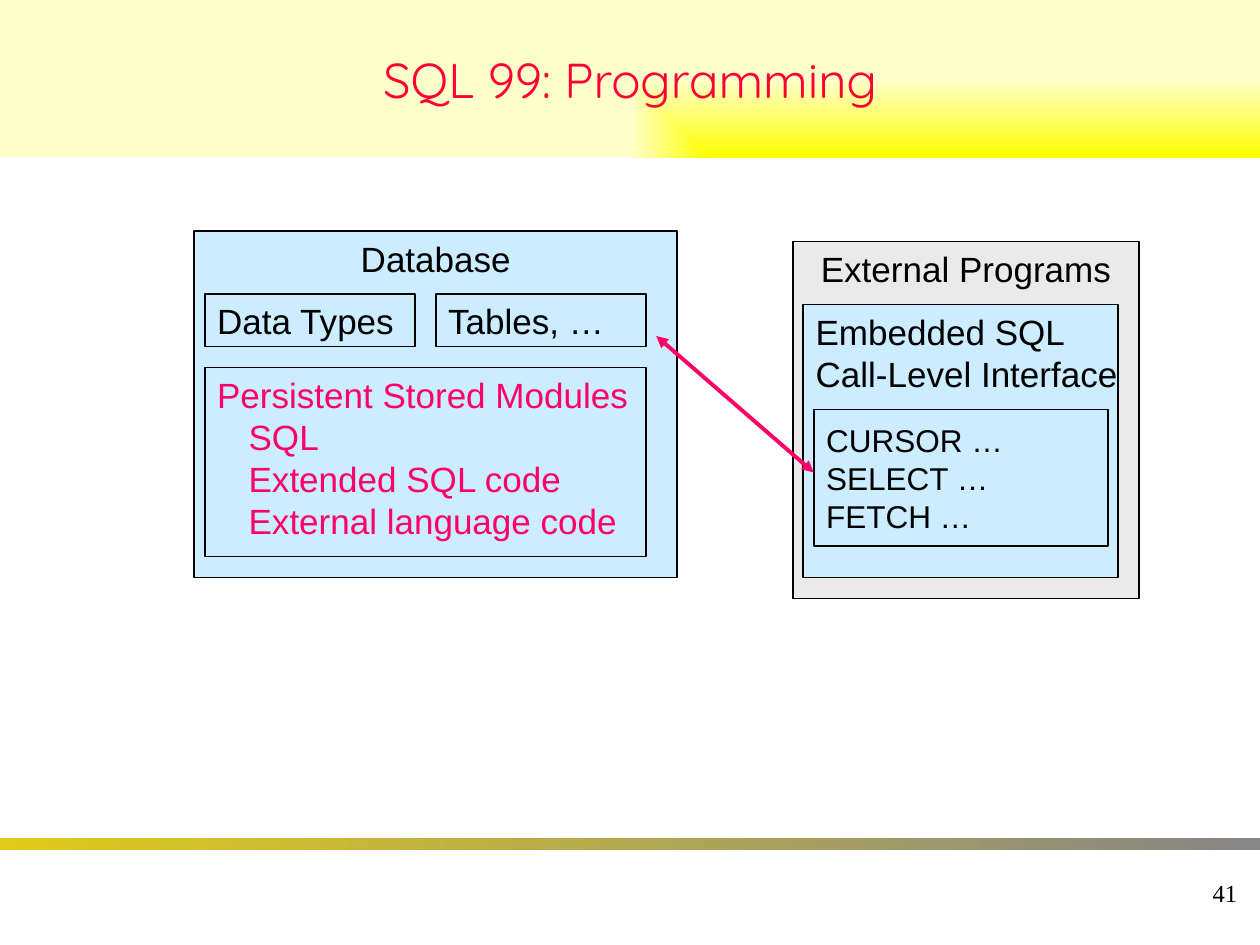
from dataclasses import dataclass

import pptx
import pptx.dml.color
import pptx.enum.shapes
import pptx.enum.text
import pptx.oxml.ns
import pptx.oxml.xmlchemy
import pptx.util
from lxml import etree

ALIGN = pptx.enum.text.PP_ALIGN
ANCHOR = pptx.enum.text.MSO_ANCHOR
CELLS_PER_INCH = 24  # the slide is a grid of 240 columns by 180 rows


@dataclass(frozen=True)
class Theme:
    ink: str = "000000"
    title: str = "FF0033"
    accent: str = "FF0066"
    panel: str = "CCECFF"
    outer: str = "EAEAEA"
    banner: tuple[str, str] = ("FFFF00", "FFFFCC")
    rule: tuple[str, str] = ("E0CB1B", "868686")
    body_font: str = "Arial"
    title_font: str = "Quicksand"
    number_font: str = "Times New Roman"
    title_size: int = 28
    body_size: int = 20
    code_size: int = 18
    number_size: int = 14
    outline: float = 1
    arrow: float = 2.25


THEME = Theme()


@dataclass(frozen=True)
class Style:
    size: int = THEME.body_size
    color: str = THEME.ink
    font: str = THEME.body_font
    align: ALIGN = ALIGN.LEFT
    anchor: ANCHOR = ANCHOR.TOP


@dataclass(frozen=True)
class Box:
    """A labelled rectangle, placed in grid cells."""
    col: float
    row: float
    cols: float
    rows: float
    lines: tuple[str, ...] = ()
    style: Style = Style()
    fill: str = THEME.panel
    indent: float = 0  # columns, for every line after the first


def cells(count: float) -> int:
    return pptx.util.Inches(count / CELLS_PER_INCH)


def rgb(value: str) -> pptx.dml.color.RGBColor:
    return pptx.dml.color.RGBColor.from_string(value)


def write(frame, box: Box, wrap: bool = False) -> None:
    frame.word_wrap = wrap
    frame.vertical_anchor = box.style.anchor
    for index, line in enumerate(box.lines):
        paragraph = frame.paragraphs[0] if index == 0 else frame.add_paragraph()
        paragraph.alignment = box.style.align
        if index and box.indent:
            properties = paragraph._p.get_or_add_pPr()
            properties.set("marL", str(cells(box.indent)))
            properties.set("indent", "0")
        run = paragraph.add_run()
        run.text = line
        run.font.size = pptx.util.Pt(box.style.size)
        run.font.name = box.style.font
        run.font.color.rgb = rgb(box.style.color)


def add_rectangle(slide, box: Box):
    shape = slide.shapes.add_shape(
        pptx.enum.shapes.MSO_SHAPE.RECTANGLE,
        cells(box.col), cells(box.row), cells(box.cols), cells(box.rows))
    shape.shadow.inherit = False
    return shape


def add_panel(slide, box: Box) -> None:
    shape = add_rectangle(slide, box)
    shape.fill.solid()
    shape.fill.fore_color.rgb = rgb(box.fill)
    shape.line.color.rgb = rgb(THEME.ink)
    shape.line.width = pptx.util.Pt(THEME.outline)
    write(shape.text_frame, box)


def add_band(slide, box: Box, colors: tuple[str, str], from_corner: bool = False) -> None:
    """Gradient band, running left to right or out of the bottom right corner."""
    shape = add_rectangle(slide, box)
    shape.line.fill.background()
    shape.fill.gradient()
    shape.fill.gradient_angle = 0
    for stop, color in zip(shape.fill.gradient_stops, colors):
        stop.color.rgb = rgb(color)
    if from_corner:
        qn = pptx.oxml.ns.qn
        linear = next(shape._element.spPr.iter(qn("a:lin")))
        gradient = linear.getparent()
        gradient.remove(linear)
        corner = etree.SubElement(gradient, qn("a:path"), {"path": "rect"})
        etree.SubElement(corner, qn("a:fillToRect"), {"l": "100000", "t": "100000"})
    write(shape.text_frame, box, wrap=True)


def add_double_arrow(slide, start: tuple[float, float], end: tuple[float, float]) -> None:
    arrow = slide.shapes.add_connector(
        pptx.enum.shapes.MSO_CONNECTOR.STRAIGHT, *map(cells, start + end))
    arrow.line.color.rgb = rgb(THEME.accent)
    arrow.line.width = pptx.util.Pt(THEME.arrow)
    qn = pptx.oxml.ns.qn
    for end_tag in ("a:headEnd", "a:tailEnd"):
        etree.SubElement(arrow.line._get_or_add_ln(), qn(end_tag), {"type": "triangle"})
    etree.SubElement(arrow._element.spPr, qn("a:effectLst"))


HEADING = Style(align=ALIGN.CENTER)
LABEL = Style(anchor=ANCHOR.MIDDLE)

DATABASE = (
    Box(37, 44, 92, 66, ("Database",), HEADING),
    Box(39, 56, 40, 10, ("Data Types",), LABEL),
    Box(83, 56, 40, 10, ("Tables, …",), LABEL),
    Box(39, 70, 84, 36,
        ("Persistent Stored Modules", "SQL", "Extended SQL code", "External language code"),
        Style(color=THEME.accent), indent=6),
)
EXTERNAL_PROGRAMS = (
    Box(151, 46, 66, 68, ("External Programs",), HEADING, THEME.outer),
    Box(153, 58, 60, 52, ("Embedded SQL", "Call-Level Interface")),
    Box(155, 78, 56, 26, ("CURSOR …", "SELECT …", "FETCH …"),
        Style(size=THEME.code_size, anchor=ANCHOR.MIDDLE)),
)
RULE = Box(0, 159.6, 240, 2.4)
TITLE = Box(0, 0, 240, 30, ("SQL 99: Programming",),
            Style(THEME.title_size, THEME.title, THEME.title_font, ALIGN.CENTER, ANCHOR.MIDDLE))
PAGE_NUMBER = Box(188, 164, 50, 12, ("41",),
                  Style(THEME.number_size, font=THEME.number_font,
                        align=ALIGN.RIGHT, anchor=ANCHOR.MIDDLE))


def main() -> None:
    deck = pptx.Presentation()
    deck.slide_width, deck.slide_height = cells(240), cells(180)
    slide = deck.slides.add_slide(deck.slide_layouts[6])

    # Footer rule and page number
    add_band(slide, RULE, THEME.rule)
    number = slide.shapes.add_textbox(
        cells(PAGE_NUMBER.col), cells(PAGE_NUMBER.row),
        cells(PAGE_NUMBER.cols), cells(PAGE_NUMBER.rows))
    write(number.text_frame, PAGE_NUMBER)

    # Title banner
    add_band(slide, TITLE, THEME.banner, from_corner=True)

    # Database and the programs outside it
    for box in DATABASE + EXTERNAL_PROGRAMS:
        add_panel(slide, box)

    # Exchange between embedded code and tables
    add_double_arrow(slide, (155, 90), (125, 64))

    deck.save("out.pptx")


if __name__ == "__main__":
    main()
